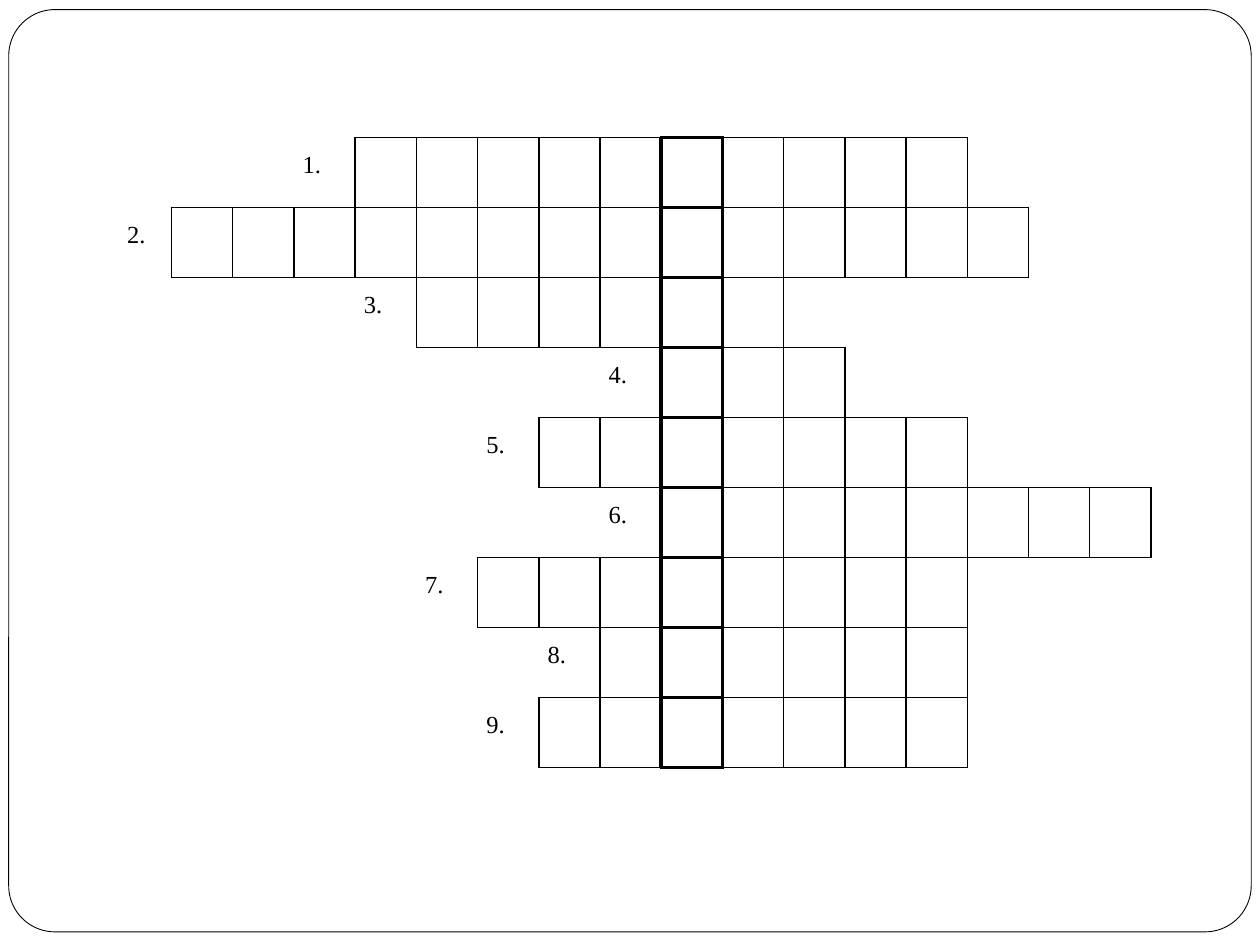
import pptx
import pptx.util
import pptx.dml.color
import pptx.enum.shapes
import pptx.enum.text
import pptx.oxml
import pptx.oxml.ns

Pt = pptx.util.Pt
qn = pptx.oxml.ns.qn

WORDS = [
    ("1.", 4, 10),
    ("2.", 1, 14),
    ("3.", 5, 6),
    ("4.", 9, 3),
    ("5.", 7, 7),
    ("6.", 9, 8),
    ("7.", 6, 8),
    ("8.", 8, 6),
    ("9.", 7, 7),
]
KEY = 9
COLS = 17
FIRST, WIDE, HIGH = 30.4, 35, 40
LEFT, TOP = 67.6, 78.7
THIN, THICK = 1, 2.25
INK, PAPER = "000000", "FFFFFF"
SIDES = [("a:lnL", 0, -1), ("a:lnR", 0, 1), ("a:lnT", -1, 0), ("a:lnB", 1, 0)]


def color(code):
    return pptx.dml.color.RGBColor.from_string(code)


def write(frame, text, size=14, font="Times New Roman", ink=INK, space=1.5):
    para = frame.paragraphs[0]
    para.alignment = pptx.enum.text.PP_ALIGN.JUSTIFY
    para.line_spacing = space
    run = para.add_run()
    run.text = text
    run.font.size = Pt(size)
    run.font.name = font
    run.font.color.rgb = color(ink)


def weight(row, col):
    if not 0 <= row < len(WORDS):
        return 0
    label, start, count = WORDS[row]
    if not start <= col < start + count:
        return 0
    return THICK if col == KEY else THIN


def border(cell, row, col):
    props = cell._tc.get_or_add_tcPr()
    for spot, (tag, down, over) in enumerate(SIDES):
        width = max(weight(row, col), weight(row + down, col + over))
        line = pptx.oxml.parse_xml(
            f'<{tag} xmlns:a="{pptx.oxml.ns.nsuri("a")}"/>')
        if width:
            line.set("w", str(Pt(width)))
            fill = line.makeelement(qn("a:solidFill"), {})
            fill.append(line.makeelement(qn("a:srgbClr"), {"val": INK}))
        else:
            fill = line.makeelement(qn("a:noFill"), {})
        line.append(fill)
        props.insert(spot, line)


def frame(slide):
    kind = pptx.enum.shapes.MSO_SHAPE.ROUNDED_RECTANGLE
    shape = slide.shapes.add_shape(kind, Pt(5), Pt(5.5), Pt(710), Pt(527))
    shape.adjustments[0] = 0.05
    shape.shadow.inherit = False
    shape.fill.solid()
    shape.fill.fore_color.rgb = color(PAPER)
    shape.line.color.rgb = color(INK)
    shape.line.width = Pt(0.5)


def puzzle(slide):
    rows = len(WORDS)
    total = FIRST + WIDE * (COLS - 1)
    table = slide.shapes.add_table(
        rows, COLS, Pt(LEFT), Pt(TOP), Pt(total), Pt(HIGH * rows)).table
    table.first_row = False
    table.horz_banding = False
    for col, part in enumerate(table.columns):
        part.width = Pt(WIDE if col else FIRST)
    for row, (label, start, count) in enumerate(WORDS):
        table.rows[row].height = Pt(HIGH)
        for col in range(COLS):
            cell = table.cell(row, col)
            cell.fill.background()
            cell.margin_left = cell.margin_right = Pt(5)
            cell.margin_top = cell.margin_bottom = 0
            border(cell, row, col)
        write(table.cell(row, start - 1).text_frame, label)


def main():
    deck = pptx.Presentation()
    deck.slide_width, deck.slide_height = Pt(720), Pt(540)
    slide = deck.slides.add_slide(deck.slide_layouts[6])
    frame(slide)
    puzzle(slide)
    deck.save("out.pptx")


if __name__ == "__main__":
    main()
